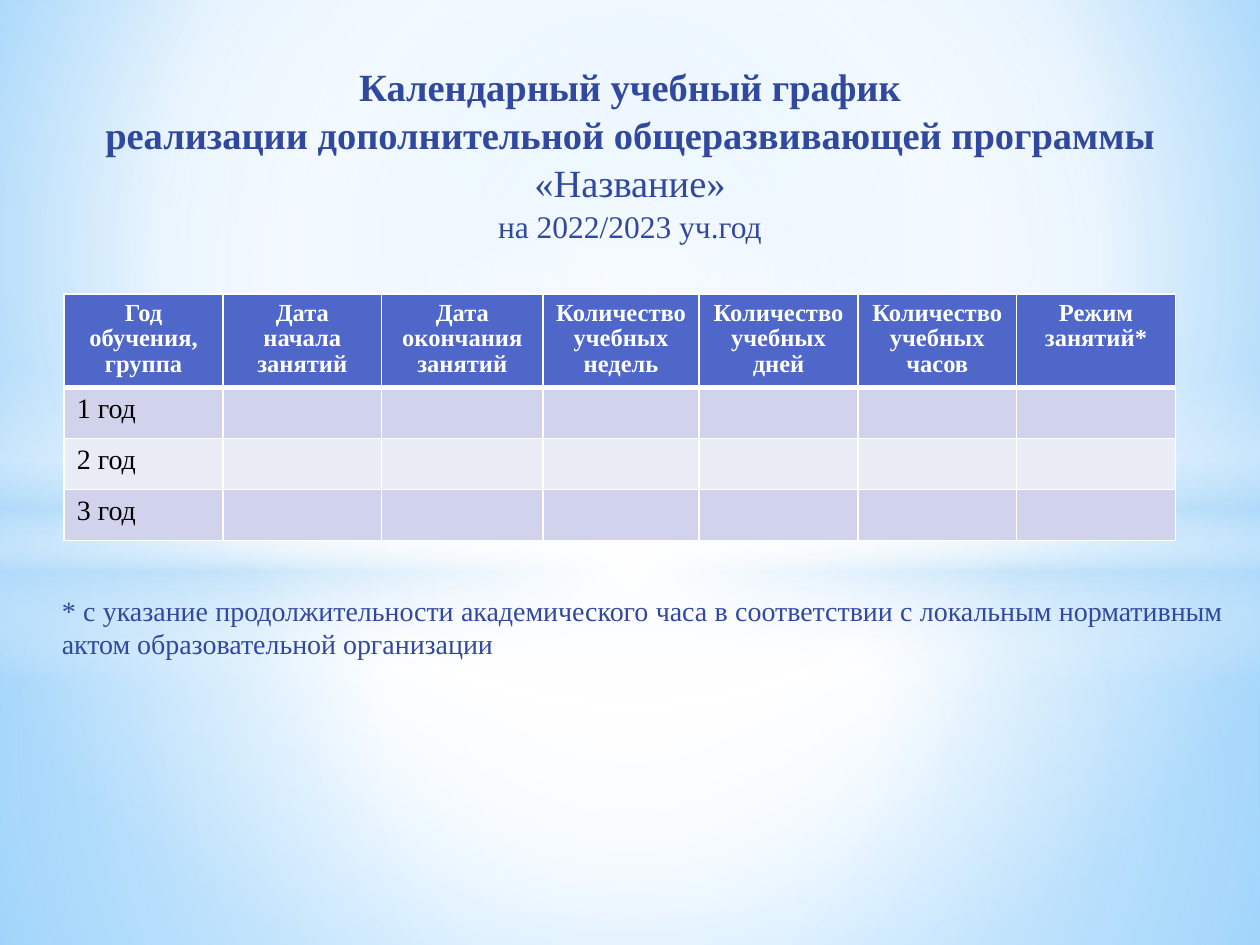
"""Build a slide with a study calendar table for a supplementary education programme."""
import pptx
import pptx.dml.color
import pptx.enum.shapes
import pptx.enum.text
import pptx.oxml
import pptx.oxml.ns
import pptx.util

THEME = {
    "font": "Times New Roman",
    "text": "31489F", "header": "4E67C8", "bands": ["D0D3EB", "E9EBF5"],
    "white": "FFFFFF", "black": "000000", "glow": "B4DCFA",
    "sky": "9ED5FF", "deep": "5BB9FF",
    "title": 22, "subtitle": 18, "body": 16, "head": 14,
}
Pt = pptx.util.Pt
RGB = pptx.dml.color.RGBColor.from_string
ALIGN = pptx.enum.text.PP_ALIGN
SHAPE = pptx.enum.shapes.MSO_SHAPE
NS = pptx.oxml.ns.nsdecls("a")


def set_gradient(fill, props, stops, center):
    """Fill with a radial gradient around center, or a vertical one if it is None."""
    fill.solid()
    gs = "".join(
        f'<a:gs pos="{pos * 1000}"><a:srgbClr val="{THEME[color]}">'
        f'<a:alpha val="{alpha * 1000}"/></a:srgbClr></a:gs>'
        for pos, color, alpha in stops)
    if center:
        sides = " ".join(f'{k}="{v * 1000}"' for k, v in zip("ltrb", center))
        kind = f'<a:path path="circle"><a:fillToRect {sides}/></a:path>'
    else:
        kind = '<a:lin ang="5400000" scaled="0"/>'
    grad = pptx.oxml.parse_xml(
        f'<a:gradFill {NS} rotWithShape="1"><a:gsLst>{gs}</a:gsLst>{kind}</a:gradFill>')
    props.replace(props.xpath("a:solidFill")[0], grad)


def add_run(p, text, size, color, bold=False):
    """Add one formatted run to a paragraph."""
    r = p.add_run()
    r.text = text
    r.font.name = THEME["font"]
    r.font.size = Pt(size)
    r.font.bold = bold
    r.font.color.rgb = RGB(THEME[color])


prs = pptx.Presentation()
prs.slide_width, prs.slide_height = pptx.util.Inches(10), pptx.util.Inches(7.5)
W, H = prs.slide_width, prs.slide_height
s = prs.slides.add_slide(prs.slide_layouts[0])

bg_fill = s.background.fill
bg_fill.solid()
set_gradient(bg_fill, s._element.xpath("p:cSld/p:bg/p:bgPr")[0],
             [(0, "sky", 100), (60, "white", 100), (100, "deep", 100)], (20, 10, 20, 60))

MIDDLE = (50, 50, 50, 50)
HORIZON = 0.56
LIGHTS = [
    (SHAPE.RECTANGLE, HORIZON, 1 - HORIZON, MIDDLE,
     [(0, "white", 91), (37, "white", 76), (100, "glow", 79)]),
    (SHAPE.RECTANGLE, 0, HORIZON, MIDDLE,
     [(0, "white", 89), (48, "white", 62), (100, "glow", 79)]),
    (SHAPE.RECTANGLE, 0.39, 0.33, None,
     [(0, "white", 0), (29, "white", 30), (45, "glow", 40),
      (55, "white", 26), (65, "glow", 60), (100, "white", 0)]),
    (SHAPE.OVAL, 0.23, 0.74, MIDDLE, [(0, "white", 100), (54, "white", 0)]),
]
for i, (shape, top, height, center, stops) in enumerate(LIGHTS):
    sp = s.shapes.add_shape(shape, 0, int(top * H), W, int(height * H))
    sp.shadow.inherit = False
    sp.line.fill.background()
    set_gradient(sp.fill, sp._element.spPr, stops, center)
    s.shapes._spTree.insert(2 + i, sp._element)

TITLE = [
    ("Календарный учебный график", THEME["title"], True),
    ("реализации дополнительной общеразвивающей программы", THEME["title"], True),
    ("«Название»", THEME["title"], False),
    ("на 2022/2023 уч.год", THEME["subtitle"], False),
]
NOTE = [("* с указание продолжительности академического часа в соответствии "
         "с локальным нормативным актом образовательной организации", THEME["body"], False)]
BLOCKS = [
    (s.shapes.title, (0.02, 0.06, 0.96, 0.21), ALIGN.CENTER, TITLE),
    (s.placeholders[1], (0.039, 0.621, 0.942, 0.1), ALIGN.JUSTIFY, NOTE),
]
for sp, (left, top, width, height), align, lines in BLOCKS:
    sp.left, sp.top = int(left * W), int(top * H)
    sp.width, sp.height = int(width * W), int(height * H)
    tf = sp.text_frame
    tf.word_wrap = True
    tf.auto_size = pptx.enum.text.MSO_AUTO_SIZE.NONE
    tf.vertical_anchor = pptx.enum.text.MSO_ANCHOR.TOP
    for i, (text, size, bold) in enumerate(lines):
        p = tf.add_paragraph() if i else tf.paragraphs[0]
        p.alignment = align
        p.space_before = Pt(1)
        add_run(p, text, size, "text", bold)

HEADERS = [
    ["Год обучения,", "группа"], ["Дата начала занятий"], ["Дата окончания занятий"],
    ["Количество учебных недель"], ["Количество учебных дней"],
    ["Количество учебных часов"], ["Режим занятий*"],
]
YEARS = ["1 год", "2 год", "3 год"]
COLS = [0.126, 0.126, 0.128, 0.124, 0.126, 0.126, 0.126]
ROWS = [0.099] + [0.054] * len(YEARS)
table = s.shapes.add_table(len(ROWS), len(COLS), int(0.051 * W), int(0.311 * H),
                           int(sum(COLS) * W), int(sum(ROWS) * H)).table
for col, share in zip(table.columns, COLS):
    col.width = int(share * W)
for row, share in zip(table.rows, ROWS):
    row.height = int(share * H)

grid = [HEADERS] + [[[year]] + [[]] * (len(COLS) - 1) for year in YEARS]
for i, row in enumerate(grid):
    for j, lines in enumerate(row):
        cell = table.cell(i, j)
        tc_pr = cell._tc.get_or_add_tcPr()
        for side in "LRTB":
            thick = (i, side) in ((0, "B"), (1, "T"))
            tc_pr.append(pptx.oxml.parse_xml(
                f'<a:ln{side} {NS} w="{Pt(3 if thick else 1)}"><a:solidFill>'
                f'<a:srgbClr val="{THEME["white"]}"/></a:solidFill></a:ln{side}>'))
        cell.fill.solid()
        cell.fill.fore_color.rgb = RGB(THEME["bands"][(i - 1) % 2] if i else THEME["header"])
        for k, text in enumerate(lines):
            p = cell.text_frame.add_paragraph() if k else cell.text_frame.paragraphs[0]
            if i:
                add_run(p, text, THEME["body"], "black")
            else:
                p.alignment = ALIGN.CENTER
                p.line_spacing = 0.96
                add_run(p, text, THEME["head"], "white", True)

prs.save("out.pptx")
